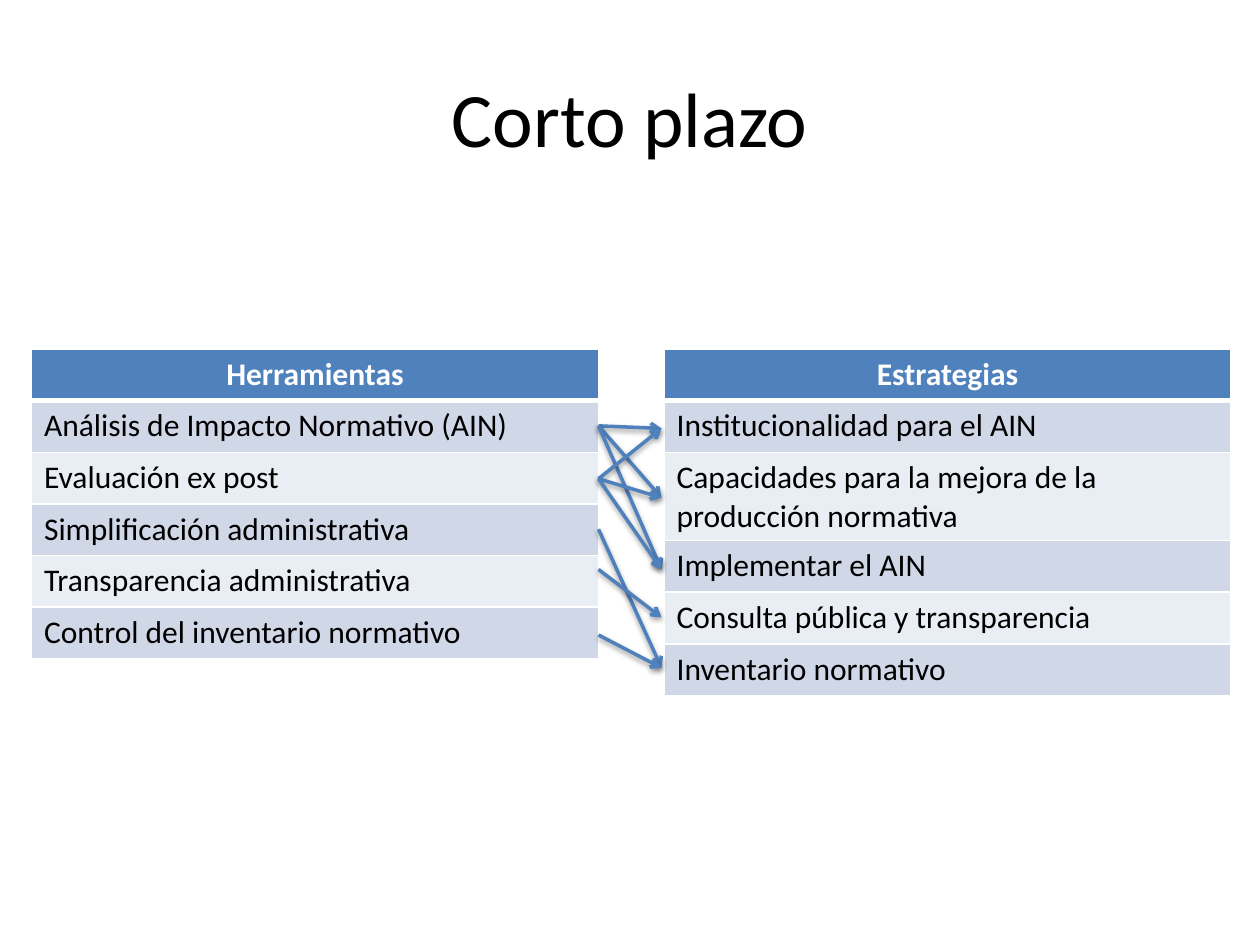
"""Builds a slide that links regulatory tools to short-term strategies."""
from lxml import etree
from pptx import Presentation
from pptx import util as u
from pptx.dml.color import RGBColor
from pptx.enum import shapes, text
from pptx.oxml import parse_xml
from pptx.oxml.ns import nsdecls, qn

BLACK = RGBColor(0x00, 0x00, 0x00)
WHITE = RGBColor(0xFF, 0xFF, 0xFF)
BLUE = RGBColor(0x4F, 0x81, 0xBD)
BANDS = (RGBColor(0xE9, 0xED, 0xF4), RGBColor(0xD0, 0xD8, 0xE8))

ROW_HEIGHT = 0.41
TABLE_TOP = 2.77
TABLE_WIDTH = 4.5
ARROW_LEFT, ARROW_RIGHT = 4.75, 5.25

TOOLS = (
    "Herramientas",
    "Análisis de Impacto Normativo (AIN)",
    "Evaluación ex post",
    "Simplificación administrativa",
    "Transparencia administrativa",
    "Control del inventario normativo",
)
STRATEGIES = (
    "Estrategias",
    "Institucionalidad para el AIN",
    "Capacidades para la mejora de la producción normativa",
    "Implementar el AIN",
    "Consulta pública y transparencia",
    "Inventario normativo",
)
LINKS = {
    3.38: (3.4, 3.95, 4.52),
    3.8: (3.4, 3.95, 4.52),
    4.2: (5.3,),
    4.52: (4.9,),
    5.04: (5.3,),
}
SHADOW = (
    f'<a:effectLst {nsdecls("a")}>'
    '<a:outerShdw blurRad="40000" dist="20000" dir="5400000" rotWithShape="0">'
    '<a:srgbClr val="000000"><a:alpha val="38000"/></a:srgbClr>'
    "</a:outerShdw></a:effectLst>"
)


class SlideBuilder:
    """Holds the font and the current slide."""

    def __init__(self, slide, font="Calibri"):
        self.slide = slide
        self.font = font

    def add_words(self, frame, words, size, color, bold=False, centered=False):
        """Puts one paragraph into a text frame."""
        para = frame.paragraphs[0]
        para.alignment = text.PP_ALIGN.CENTER if centered else text.PP_ALIGN.LEFT
        span = para.add_run()
        span.text = words
        span.font.name = self.font
        span.font.size = u.Pt(size)
        span.font.bold = bold
        span.font.color.rgb = color

    def title(self, words, left, top, width, height):
        """Adds the centred slide title."""
        box = self.slide.shapes.add_textbox(*map(u.Inches, (left, top, width, height)))
        box.text_frame.word_wrap = True
        box.text_frame.vertical_anchor = text.MSO_ANCHOR.MIDDLE
        self.add_words(box.text_frame, words, 44, BLACK, centered=True)

    def borders(self, cell, bottom):
        """Draws white borders around a cell, the lower one in its own width."""
        properties = cell._tc.get_or_add_tcPr()
        for side, width in (("L", 1), ("R", 1), ("T", 1), ("B", bottom)):
            line = etree.SubElement(properties, qn(f"a:ln{side}"), w=str(u.Pt(width)))
            fill = etree.SubElement(line, qn("a:solidFill"))
            etree.SubElement(fill, qn("a:srgbClr"), val=str(WHITE))

    def table(self, rows, left):
        """Adds a one-column banded table with a header row."""
        frame = self.slide.shapes.add_table(
            len(rows), 1, u.Inches(left), u.Inches(TABLE_TOP),
            u.Inches(TABLE_WIDTH), u.Inches(ROW_HEIGHT * len(rows)),
        )
        for index, words in enumerate(rows):
            header = index == 0
            cell = frame.table.cell(index, 0)
            self.borders(cell, 3 if header else 1)
            cell.fill.solid()
            cell.fill.fore_color.rgb = BLUE if header else BANDS[index % 2]
            color = WHITE if header else BLACK
            self.add_words(cell.text_frame, words, 18, color, header, header)

    def arrow(self, start, end):
        """Adds a shadowed arrow between the tables, from one height to another."""
        line = self.slide.shapes.add_connector(
            shapes.MSO_CONNECTOR.STRAIGHT,
            *map(u.Inches, (ARROW_LEFT, start, ARROW_RIGHT, end)),
        )
        line.line.color.rgb = BLUE
        line.line.width = u.Pt(2)
        etree.SubElement(line.line._get_or_add_ln(), qn("a:tailEnd"), type="arrow")
        line._element.spPr.append(parse_xml(SHADOW))


def main():
    """Builds and saves the deck."""
    deck = Presentation()
    deck.slide_width, deck.slide_height = u.Inches(10), u.Inches(7.5)
    page = SlideBuilder(deck.slides.add_slide(deck.slide_layouts[6]))
    page.title("Corto plazo", 0.5, 0.3, 9, 1.25)
    page.table(STRATEGIES, 5.27)
    page.table(TOOLS, 0.25)
    for start, ends in LINKS.items():
        for end in ends:
            page.arrow(start, end)
    deck.save("out.pptx")


if __name__ == "__main__":
    main()
